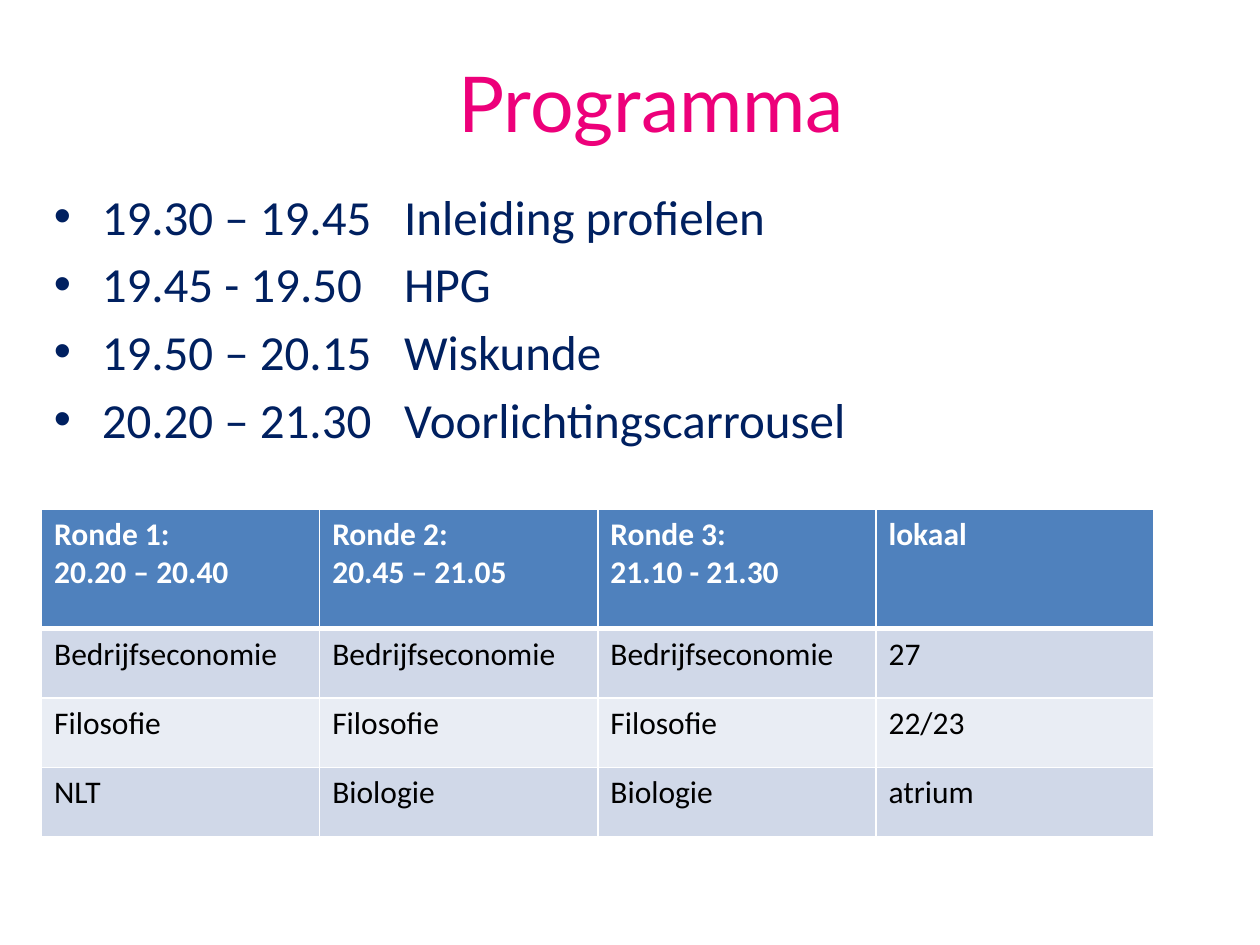
"""Build the programme slide with its time list and table of rounds."""
from lxml import etree
from pptx import Presentation
from pptx.dml.color import RGBColor
from pptx.enum import text
from pptx.oxml import ns
from pptx.util import Inches, Pt

COLOURS = {
    "title": "ED007A", "body": "002060", "header": "4F81BD", "odd": "D0D8E8",
    "even": "E9EDF4", "white": "FFFFFF", "black": "000000",
}
PROGRAMME = [
    ("19.30 – 19.45", "Inleiding profielen"),
    ("19.45 - 19.50", "HPG"),
    ("19.50 – 20.15", "Wiskunde"),
    ("20.20 – 21.30", "Voorlichtingscarrousel"),
]
ROUNDS = [
    ["Ronde 1:\n20.20 – 20.40", "Ronde 2:\n20.45 – 21.05", "Ronde 3:\n21.10 - 21.30", "lokaal"],
    ["Bedrijfseconomie"] * 3 + ["27"],
    ["Filosofie"] * 3 + ["22/23"],
    ["NLT", "Biologie", "Biologie", "atrium"],
]
ROW_HEIGHTS = [0.95, 0.55, 0.55, 0.55]


def set_font(paragraph, name, size, colour, bold=False):
    """Set the font of a whole paragraph."""
    font = paragraph.font
    font.name, font.size, font.bold = name, Pt(size), bold
    font.color.rgb = RGBColor.from_string(COLOURS[colour])


def add_border(cell, position, side, width):
    """Give one side of a cell a white line."""
    line = etree.Element(ns.qn(f"a:ln{side}"), w=str(Pt(width)))
    fill = etree.SubElement(line, ns.qn("a:solidFill"))
    etree.SubElement(fill, ns.qn("a:srgbClr"), val=COLOURS["white"])
    cell._tc.get_or_add_tcPr().insert(position, line)


presentation = Presentation()
presentation.slide_width, presentation.slide_height = Inches(10), Inches(7.5)
slide = presentation.slides.add_slide(presentation.slide_layouts[6])

body = slide.shapes.add_textbox(Inches(0.33), Inches(1.43), Inches(9), Inches(4.95))
body.text_frame.word_wrap = True
body.text_frame.text = "\n".join("\t".join(entry) for entry in PROGRAMME)
for index, paragraph in enumerate(body.text_frame.paragraphs):
    if index:
        paragraph.space_before = Pt(5)
    properties = paragraph._p.get_or_add_pPr()
    properties.set("marL", str(Inches(0.38)))
    properties.set("indent", str(Inches(-0.38)))
    etree.SubElement(properties, ns.qn("a:buFont"), typeface="Arial")
    etree.SubElement(properties, ns.qn("a:buChar"), char="•")
    tabs = etree.SubElement(properties, ns.qn("a:tabLst"))
    etree.SubElement(tabs, ns.qn("a:tab"), pos=str(Inches(2.78)), algn="l")
    set_font(paragraph, "Calibri", 28, "body")

title = slide.shapes.add_textbox(Inches(0.67), Inches(0.18), Inches(9), Inches(1.25))
title.text_frame.word_wrap = True
title.text_frame.vertical_anchor = text.MSO_ANCHOR.MIDDLE
title.text_frame.text = "Programma"
heading = title.text_frame.paragraphs[0]
heading.alignment = text.PP_ALIGN.CENTER
set_font(heading, "Lato", 44, "title")

table = slide.shapes.add_table(
    len(ROUNDS), len(ROUNDS[0]), Inches(0.33), Inches(4.04), Inches(8.83), Inches(sum(ROW_HEIGHTS))
).table
for row_index, (values, height) in enumerate(zip(ROUNDS, ROW_HEIGHTS)):
    table.rows[row_index].height = Inches(height)
    is_header = row_index == 0
    fill_name = "header" if is_header else "odd" if row_index % 2 else "even"
    widths = {"L": 1, "R": 1, "T": 3 if row_index == 1 else 1, "B": 3 if is_header else 1}
    for column_index, value in enumerate(values):
        cell = table.cell(row_index, column_index)
        cell.text = value
        cell.fill.solid()
        cell.fill.fore_color.rgb = RGBColor.from_string(COLOURS[fill_name])
        for position, (side, width) in enumerate(widths.items()):
            add_border(cell, position, side, width)
        for paragraph in cell.text_frame.paragraphs:
            set_font(paragraph, "Calibri", 18, "white" if is_header else "black", is_header)

presentation.save("out.pptx")
